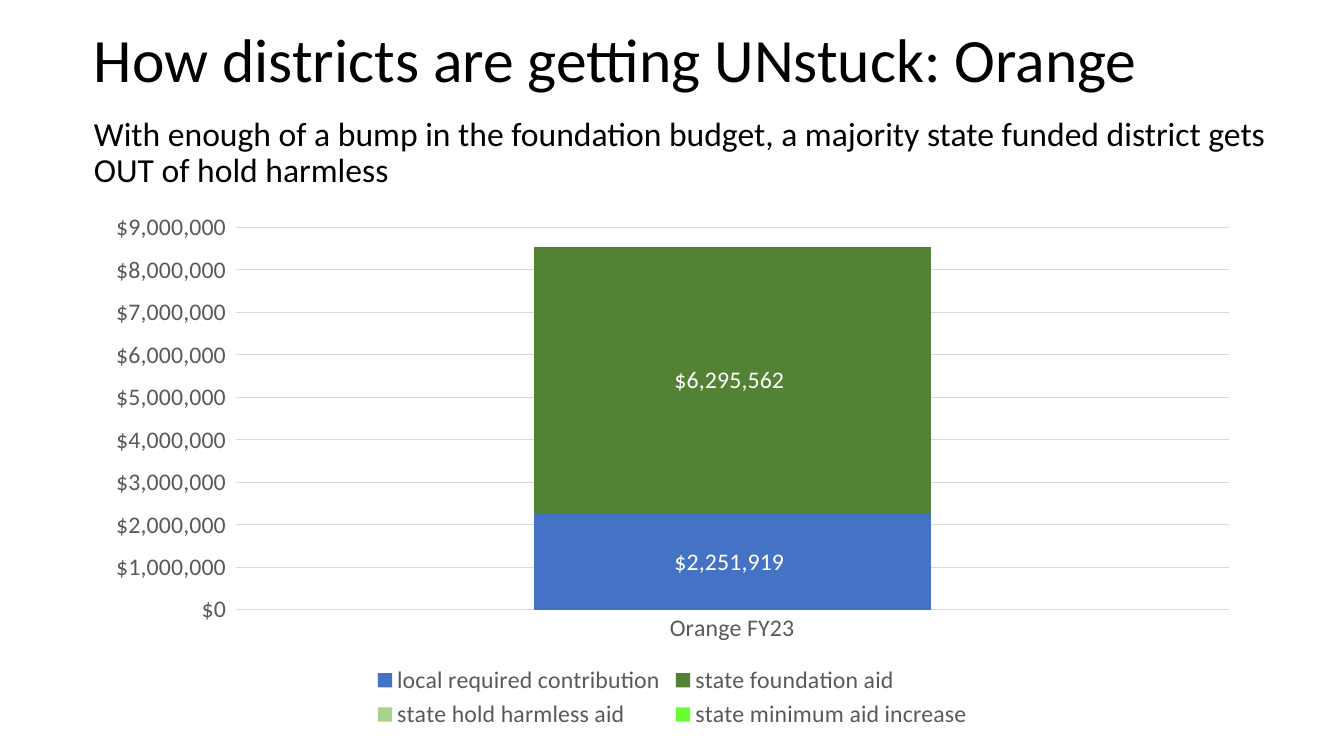
import pptx
import pptx.chart.data
import pptx.dml.color
import pptx.enum.chart
import pptx.enum.text
import pptx.util

PX = 12192000 / 1344
DOLLARS = '"$"#,##0_);[Red]\\("$"#,##0\\)'
GREY, GRID = "595959", "D9D9D9"


def colour(value):
    return pptx.dml.color.RGBColor.from_string(value)


def px(length):
    return pptx.util.Emu(round(length * PX))


def assign(target, formats):
    for name, value in formats.items():
        setattr(target, name, value)


class DistrictSlide:
    """Holds the text style and the current slide, and adds elements to it."""

    def __init__(self, presentation, font_name):
        self.font_name = font_name
        self.slide = presentation.slides.add_slide(presentation.slide_layouts[6])

    def style_font(self, font, size, value):
        assign(font, {"name": self.font_name, "size": pptx.util.Pt(size), "bold": False})
        font.color.rgb = colour(value)

    def style_line(self, line):
        line.color.rgb = colour(GRID)
        line.width = pptx.util.Pt(0.75)

    def add_text(self, box, wording, size, anchor, space_before=0):
        frame = self.slide.shapes.add_textbox(*map(px, box)).text_frame
        assign(frame, {"word_wrap": True, "vertical_anchor": anchor})
        paragraph = frame.paragraphs[0]
        assign(paragraph, {"line_spacing": 0.9, "space_before": pptx.util.Pt(space_before)})
        run = paragraph.add_run()
        run.text = wording
        self.style_font(run.font, size, "000000")

    def add_stacked_chart(self, box, district, funding, size):
        data = pptx.chart.data.CategoryChartData(number_format=DOLLARS)
        data.categories = [district]
        for source, amount, _ in funding:
            data.add_series(source, [amount])
        kind = pptx.enum.chart.XL_CHART_TYPE.COLUMN_STACKED
        chart = self.slide.shapes.add_chart(kind, *map(px, box), data).chart
        assign(chart, {"has_title": False, "has_legend": True})
        self.style_font(chart.font, size, "000000")

        bottom = pptx.enum.chart.XL_LEGEND_POSITION.BOTTOM
        assign(chart.legend, {"position": bottom, "include_in_layout": False})
        self.style_font(chart.legend.font, size, GREY)

        no_tick = pptx.enum.chart.XL_TICK_MARK.NONE
        for axis in (chart.category_axis, chart.value_axis):
            assign(axis, {"major_tick_mark": no_tick, "minor_tick_mark": no_tick})
            self.style_font(axis.tick_labels.font, size, GREY)
        self.style_line(chart.category_axis.format.line)
        dollars = chart.value_axis
        dollars.format.line.fill.background()
        self.style_line(dollars.major_gridlines.format.line)
        number_format = {"number_format": DOLLARS, "number_format_is_linked": False}
        assign(dollars.tick_labels, number_format)

        plot = chart.plots[0]
        assign(plot, {"gap_width": 150, "overlap": 100, "vary_by_categories": False})
        for series, (_, amount, fill) in zip(plot.series, funding):
            series.format.fill.solid()
            series.format.fill.fore_color.rgb = colour(fill)
            if amount:
                labels = series.data_labels
                center = pptx.enum.chart.XL_LABEL_POSITION.CENTER
                assign(labels, {"show_value": True, "position": center, **number_format})
                self.style_font(labels.font, size, "FFFFFF")


def main():
    presentation = pptx.Presentation()
    assign(presentation, {"slide_width": px(1344), "slide_height": px(756)})
    orange = DistrictSlide(presentation, "Calibri")
    anchors = pptx.enum.text.MSO_ANCHOR
    orange.add_text(
        (84, 12, 1159, 101),
        "How districts are getting UNstuck: Orange",
        44,
        anchors.MIDDLE,
    )
    funding = [
        ("local required contribution", 2251919, "4472C4"),
        ("state foundation aid", 6295562, "548235"),
        ("state hold harmless aid", 0, "A9D18E"),
        ("state minimum aid increase", 0, "66FF33"),
    ]
    orange.add_stacked_chart((93, 202, 1159, 532), "Orange FY23", funding, 17)
    orange.add_text(
        (84, 112, 1237, 91),
        "With enough of a bump in the foundation budget, "
        "a majority state funded district gets OUT of hold harmless",
        24,
        anchors.TOP,
        space_before=10,
    )
    presentation.save("out.pptx")


if __name__ == "__main__":
    main()
